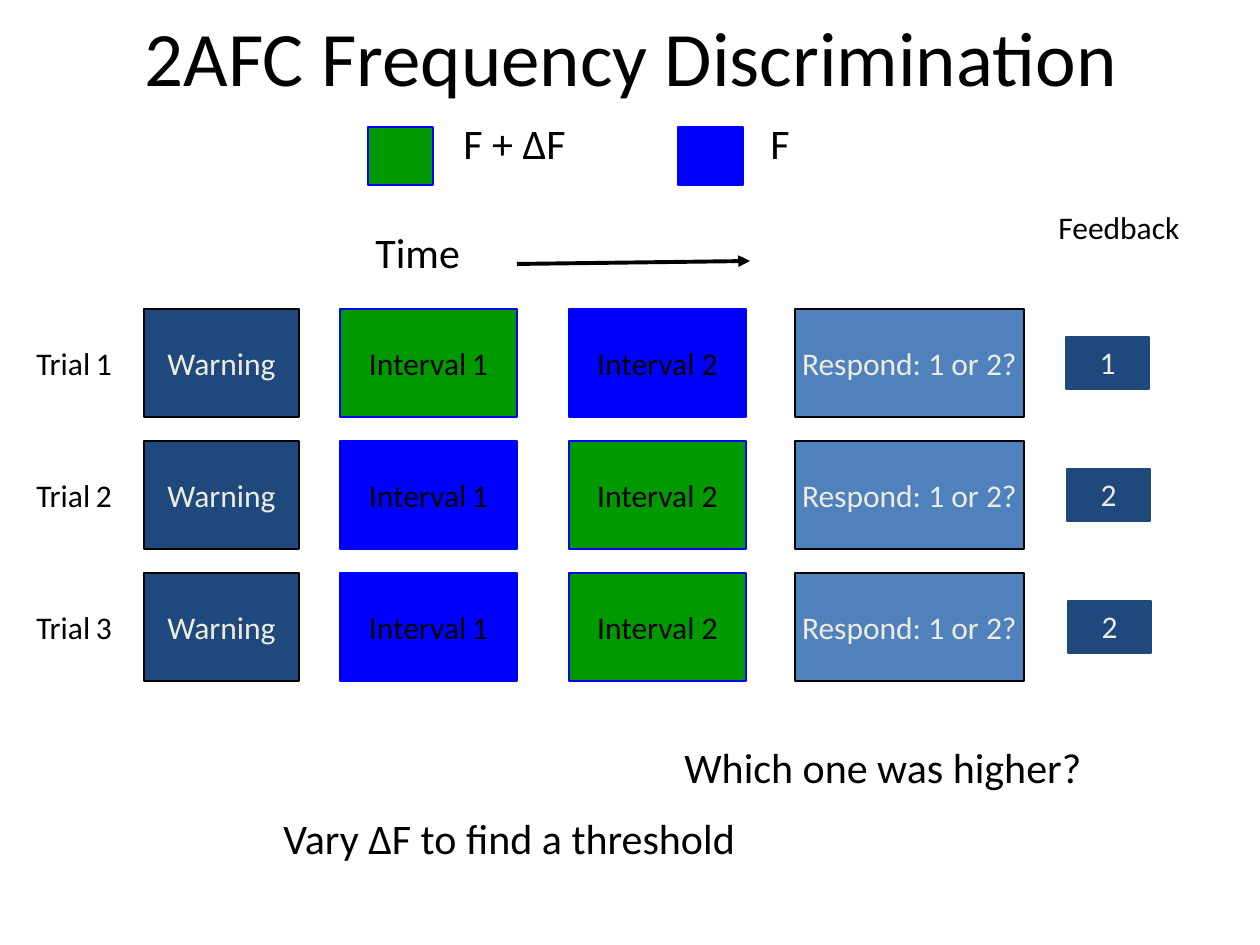
from lxml import etree
from pptx import Presentation
from pptx.dml.color import RGBColor
from pptx.enum.shapes import MSO_CONNECTOR, MSO_SHAPE
from pptx.enum.text import MSO_ANCHOR, MSO_AUTO_SIZE, PP_ALIGN
from pptx.oxml.ns import qn
from pptx.util import Emu, Pt

RECTANGLE, STRAIGHT = MSO_SHAPE.RECTANGLE, MSO_CONNECTOR.STRAIGHT
TOP, MIDDLE = MSO_ANCHOR.TOP, MSO_ANCHOR.MIDDLE
LEFT, CENTER = PP_ALIGN.LEFT, PP_ALIGN.CENTER
GROW = MSO_AUTO_SIZE.SHAPE_TO_FIT_TEXT

PX_PER_INCH = 126
FONT = "Calibri"
BLACK, CREAM, NAVY, STEEL = "000000", "EEECE1", "1F497D", "4F81BD"
HIGH, LOW = "009900", "0000FF"

# text, size, (left, top, width, height)
LABELS = [
    ("Time", 24, (363, 220, 113, 63)),
    ("Feedback", 18, (1046, 202, 147, 50)),
    ("Which one was higher?", 24, (672, 735, 426, 63)),
    ("Vary ∆F to find a threshold", 24, (271, 806, 486, 63)),
]
# text, fill, swatch left, label left, label width
LEGEND = [
    ("F + ∆F", HIGH, 368, 451, 129),
    ("F", LOW, 678, 758, 46),
]
# fills of the two intervals, correct answer
TRIALS = [
    (HIGH, LOW, "1"),
    (LOW, HIGH, "2"),
    (LOW, HIGH, "2"),
]
# left, width of each step
WARNING, FIRST, SECOND, RESPOND = (144, 155), (340, 177), (569, 177), (795, 229)
ROW_TOP, ROW_PITCH, ROW_HEIGHT = 309, 132, 108


def px(value):
    return Emu(round(value * 914400 / PX_PER_INCH))


def rgb(color):
    return RGBColor.from_string(color)


def write(shape, runs, color, align, anchor, wrap=False):
    """Fill a shape with one paragraph of (text, size) runs."""
    frame = shape.text_frame
    frame.word_wrap = wrap
    frame.vertical_anchor = anchor
    para = frame.paragraphs[0]
    para.alignment = align
    for text, size in runs:
        span = para.add_run()
        span.text = text
        span.font.name = FONT
        span.font.size = Pt(size)
        span.font.color.rgb = rgb(color)


def numbered(word, number):
    """Runs for a word and its number, parted by a narrower space."""
    return [(word, 18), (" ", 14), (str(number), 18)]


def add_label(page, runs, place):
    box = page.shapes.add_textbox(*map(px, place))
    write(box, runs, BLACK, LEFT, TOP)
    box.text_frame.auto_size = GROW


def add_box(page, place, fill, line):
    box = page.shapes.add_shape(RECTANGLE, *map(px, place))
    box.shadow.inherit = False
    box.fill.solid()
    box.fill.fore_color.rgb = rgb(fill)
    box.line.color.rgb = rgb(line)
    box.line.width = Pt(0.75)
    return box


def add_arrow(page, start, end):
    arrow = page.shapes.add_connector(STRAIGHT, *map(px, start + end))
    arrow.line.color.rgb = rgb(BLACK)
    arrow.line.width = Pt(2.25)
    etree.SubElement(arrow.line._get_or_add_ln(), qn("a:tailEnd"), type="triangle")
    etree.SubElement(arrow._element.spPr, qn("a:effectLst"))


def add_trial(page, index, first_fill, second_fill, answer):
    top = ROW_TOP + index * ROW_PITCH
    steps = [
        (WARNING, NAVY, BLACK, [("Warning", 18)], CREAM),
        (FIRST, first_fill, LOW, numbered("Interval", 1), BLACK),
        (SECOND, second_fill, LOW, [("Interval 2", 18)], BLACK),
        (RESPOND, STEEL, BLACK, [("Respond: 1 or 2?", 18)], CREAM),
    ]
    for (left, width), fill, line, runs, color in steps:
        box = add_box(page, (left, top, width, ROW_HEIGHT), fill, line)
        write(box, runs, color, CENTER, MIDDLE)
    add_label(page, numbered("Trial", index + 1), (24, top + 29, 102, 50))
    feedback = add_box(page, (1066 + index, top + 28, 83, 52), NAVY, NAVY)
    write(feedback, [(answer, 18)], CREAM, CENTER, TOP, wrap=True)
    feedback.text_frame.auto_size = GROW


def main():
    deck = Presentation()
    deck.slide_width, deck.slide_height = px(1260), px(945)
    page = deck.slides.add_slide(deck.slide_layouts[6])

    title = page.shapes.add_textbox(*map(px, (96, 0, 1071, 112)))
    write(title, [("2AFC Frequency Discrimination", 44)], BLACK, CENTER, MIDDLE, wrap=True)
    add_arrow(page, (517, 264), (750, 261))
    for index, trial in enumerate(TRIALS):
        add_trial(page, index, *trial)
    for text, fill, swatch_left, label_left, width in LEGEND:
        add_box(page, (swatch_left, 127, 65, 58), fill, LOW)
        add_label(page, [(text, 24)], (label_left, 111, width, 64))
    for text, size, place in LABELS:
        add_label(page, [(text, size)], place)

    deck.save("out.pptx")


if __name__ == "__main__":
    main()
